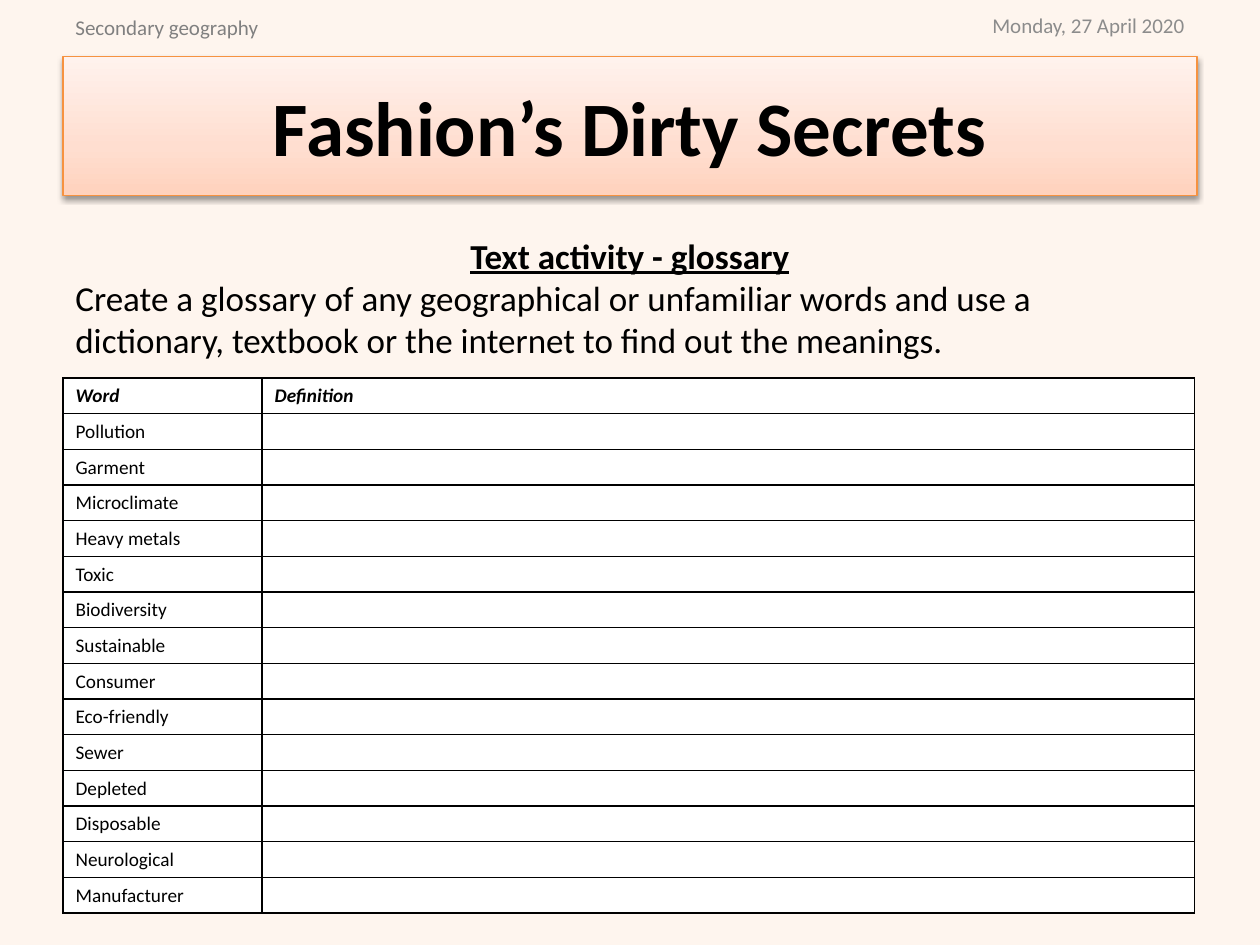
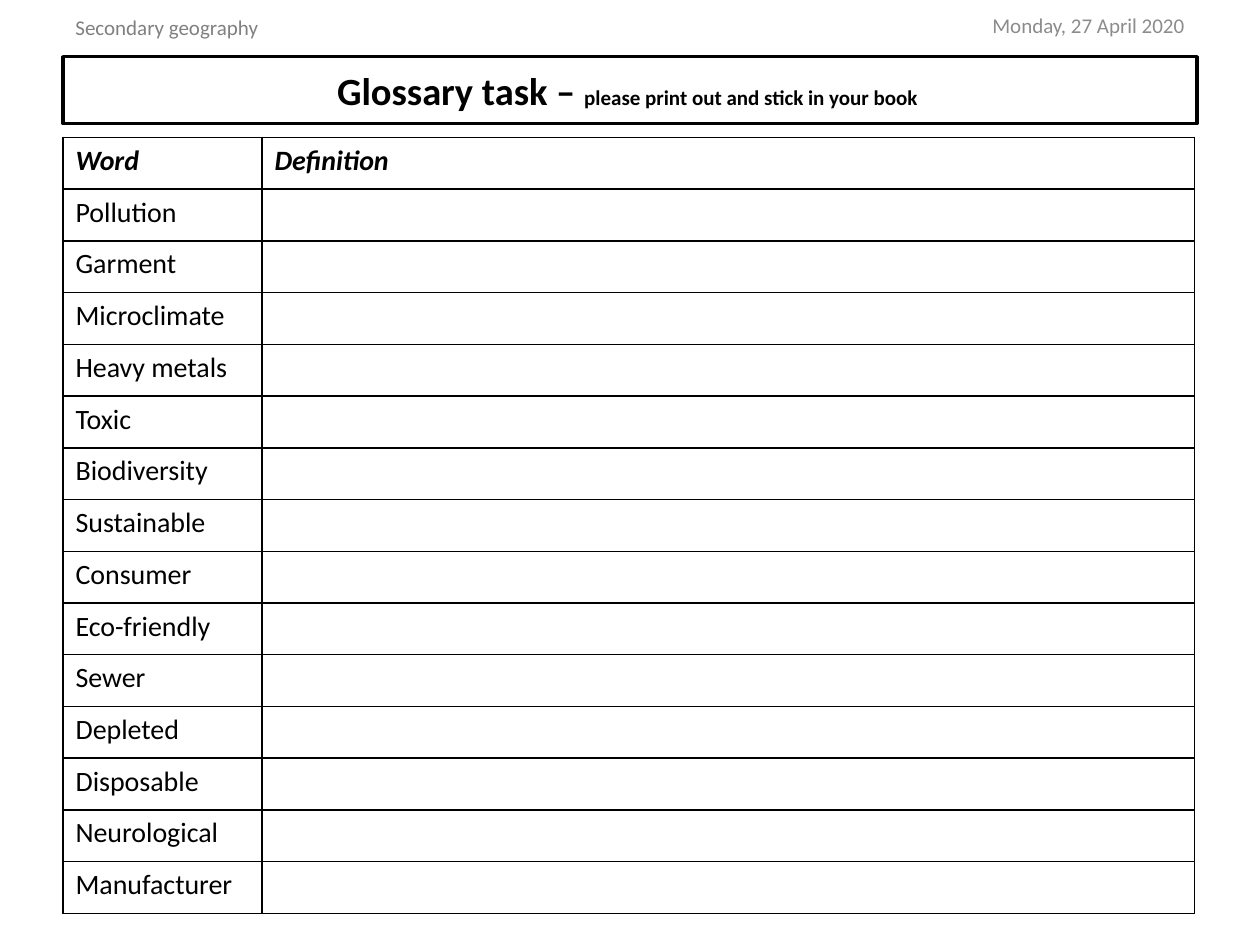
"""Build two glossary slides: a class activity and its printable sheet."""
from dataclasses import dataclass
from typing import Optional

from lxml import etree
from pptx import Presentation
from pptx import util as u
from pptx.dml.color import RGBColor
from pptx.enum import text
from pptx.oxml import ns

FONT = "Calibri"
COLOURS = {
    "black": "000000",
    "white": "FFFFFF",
    "cream": "FEF5EE",
    "orange": "F69240",
    "date": "8C8C8C",
    "subject": "808080",
}
TITLE_GRADIENT = ((0, "FFD2BD"), (35, "FFDED0"), (100, "FFF2ED"))
LEFT = 0.5
CONTENT_WIDTH = 9
TABLE_BOTTOM = 7.25
COLUMN_WIDTHS = (1.58, 7.4)
HEADINGS = ("Word", "Definition")
WORDS = (
    "Pollution", "Garment", "Microclimate", "Heavy metals", "Toxic",
    "Biodiversity", "Sustainable", "Consumer", "Eco-friendly", "Sewer",
    "Depleted", "Disposable", "Neurological", "Manufacturer",
)


@dataclass(frozen=True)
class TextRun:
    """A stretch of text in one style."""
    words: str
    size: float
    colour: str = "black"
    bold: bool = False
    italic: bool = False
    underline: bool = False


@dataclass(frozen=True)
class Line:
    """A paragraph with its alignment."""
    runs: tuple[TextRun, ...]
    align: text.PP_ALIGN = text.PP_ALIGN.LEFT


@dataclass(frozen=True)
class TextBox:
    """A text box with its place and paragraphs."""
    left: float
    top: float
    width: float
    height: float
    lines: tuple[Line, ...]
    anchor: text.MSO_ANCHOR = text.MSO_ANCHOR.TOP
    wrap: bool = True


@dataclass(frozen=True)
class GlossarySlide:
    """What differs from one glossary slide to the next."""
    background: str
    title: tuple[TextRun, ...]
    title_height: float
    title_line: str
    title_line_width: float
    gradient_title: bool
    table_top: float
    table_size: float
    instructions: Optional[TextBox] = None


HEADER_BOXES = (
    TextBox(6.53, 0, 2.97, 0.4,
            (Line((TextRun("Monday, 27 April 2020", 12, "date"),), text.PP_ALIGN.RIGHT),),
            text.MSO_ANCHOR.MIDDLE),
    TextBox(LEFT, 0.07, 1.69, 0.3,
            (Line((TextRun("Secondary geography", 12, "subject"),)),), wrap=False),
)
INSTRUCTIONS = TextBox(LEFT, 1.81, CONTENT_WIDTH, 1.11, (
    Line((TextRun("Text activity - glossary", 20, bold=True, underline=True),),
         text.PP_ALIGN.CENTER),
    Line((TextRun("Create a glossary of any geographical or unfamiliar words and use a "
                  "dictionary, textbook or the internet to find out the meanings.", 20),)),
))
SLIDES = (
    GlossarySlide("cream", (TextRun("Fashion’s Dirty Secrets", 44, bold=True),),
                  1.1, "orange", 0.75, True, 3, 11, INSTRUCTIONS),
    GlossarySlide("white", (TextRun("Glossary task – ", 22, bold=True),
                            TextRun("please print out and stick in your book ", 12, bold=True)),
                  0.53, "black", 2, False, 1.09, 16),
)


def colour(name: str) -> RGBColor:
    """Look up a colour by name."""
    return RGBColor.from_string(COLOURS[name])


def add_element(parent, tag: str, **attributes):
    """Append a drawing element with attributes."""
    values = {name: str(value) for name, value in attributes.items()}
    return etree.SubElement(parent, ns.qn(tag), values)


def write_line(paragraph, line: Line) -> None:
    """Write a line's runs into a paragraph."""
    paragraph.alignment = line.align
    for item in line.runs:
        run = paragraph.add_run()
        run.text = item.words
        font = run.font
        font.name, font.size = FONT, u.Pt(item.size)
        font.bold, font.italic, font.underline = item.bold, item.italic, item.underline
        font.color.rgb = colour(item.colour)


def add_text_box(slide, box: TextBox) -> None:
    """Draw a text box."""
    shape = slide.shapes.add_textbox(u.Inches(box.left), u.Inches(box.top),
                                     u.Inches(box.width), u.Inches(box.height))
    frame = shape.text_frame
    frame.word_wrap = box.wrap
    frame.vertical_anchor = box.anchor
    for index, line in enumerate(box.lines):
        write_line(frame.add_paragraph() if index else frame.paragraphs[0], line)


def add_gradient_and_shadow(shape) -> None:
    """Give the title band its gradient and soft shadow."""
    shape.fill.gradient()
    shape.fill.gradient_angle = 90
    properties = shape.element.spPr
    stops = properties.find(".//" + ns.qn("a:gsLst"))
    for stop in list(stops):
        stops.remove(stop)
    for position, value in TITLE_GRADIENT:
        stop = add_element(stops, "a:gs", pos=position * 1000)
        add_element(stop, "a:srgbClr", val=value)
    shadow = add_element(properties.find(ns.qn("a:effectLst")), "a:outerShdw",
                         blurRad=u.Pt(3.1), dist=u.Pt(1.6), dir=5400000, rotWithShape=0)
    shade = add_element(shadow, "a:srgbClr", val=COLOURS["black"])
    add_element(shade, "a:alpha", val=38000)


def format_title(slide, content: GlossarySlide) -> None:
    """Place, style and fill the title placeholder."""
    title = slide.shapes.title
    title.left, title.top = u.Inches(LEFT), u.Inches(0.45)
    title.width, title.height = u.Inches(CONTENT_WIDTH), u.Inches(content.title_height)
    title.line.color.rgb = colour(content.title_line)
    title.line.width = u.Pt(content.title_line_width)
    title.shadow.inherit = False
    if content.gradient_title:
        add_gradient_and_shadow(title)
    else:
        title.fill.solid()
        title.fill.fore_color.rgb = colour("white")
    frame = title.text_frame
    frame.auto_size = text.MSO_AUTO_SIZE.NONE
    frame.vertical_anchor = text.MSO_ANCHOR.MIDDLE
    write_line(frame.paragraphs[0], Line(content.title, text.PP_ALIGN.CENTER))


def format_cell(cell, words: str, size: float, heading: bool) -> None:
    """Write one cell and draw its borders and fill."""
    cell.margin_top, cell.margin_bottom = u.Inches(0.05), u.Inches(0.04)
    paragraph = cell.text_frame.paragraphs[0]
    if words:
        write_line(paragraph, Line((TextRun(words, size, bold=heading, italic=heading),)))
    else:
        add_element(paragraph._p, "a:endParaRPr", sz=size * 100)
    properties = cell._tc.get_or_add_tcPr()
    for side in ("a:lnL", "a:lnR", "a:lnT", "a:lnB"):
        border = add_element(properties, side, w=u.Pt(1))
        add_element(add_element(border, "a:solidFill"), "a:srgbClr", val=COLOURS["black"])
    cell.fill.solid()
    cell.fill.fore_color.rgb = colour("white")


def add_glossary(slide, top: float, size: float) -> None:
    """Draw the glossary table down to the common bottom edge."""
    rows = [HEADINGS] + [(word, "") for word in WORDS]
    height = u.Inches(TABLE_BOTTOM - top)
    table = slide.shapes.add_table(len(rows), len(HEADINGS), u.Inches(LEFT), u.Inches(top),
                                   u.Inches(sum(COLUMN_WIDTHS)), height).table
    table.first_row = table.horz_banding = False
    for column, width in zip(table.columns, COLUMN_WIDTHS):
        column.width = u.Inches(width)
    for row_index, row in enumerate(rows):
        table.rows[row_index].height = height // len(rows)
        for column_index, words in enumerate(row):
            format_cell(table.cell(row_index, column_index), words, size, row_index == 0)


def add_slide(presentation, content: GlossarySlide) -> None:
    """Build one slide from its description."""
    slide = presentation.slides.add_slide(presentation.slide_layouts[5])
    slide.background.fill.solid()
    slide.background.fill.fore_color.rgb = colour(content.background)
    format_title(slide, content)
    for box in HEADER_BOXES:
        add_text_box(slide, box)
    if content.instructions:
        add_text_box(slide, content.instructions)
    add_glossary(slide, content.table_top, content.table_size)


def main() -> None:
    """Build and save the presentation."""
    presentation = Presentation()
    presentation.slide_width, presentation.slide_height = u.Inches(10), u.Inches(7.5)
    for content in SLIDES:
        add_slide(presentation, content)
    presentation.save("out.pptx")


if __name__ == "__main__":
    main()
